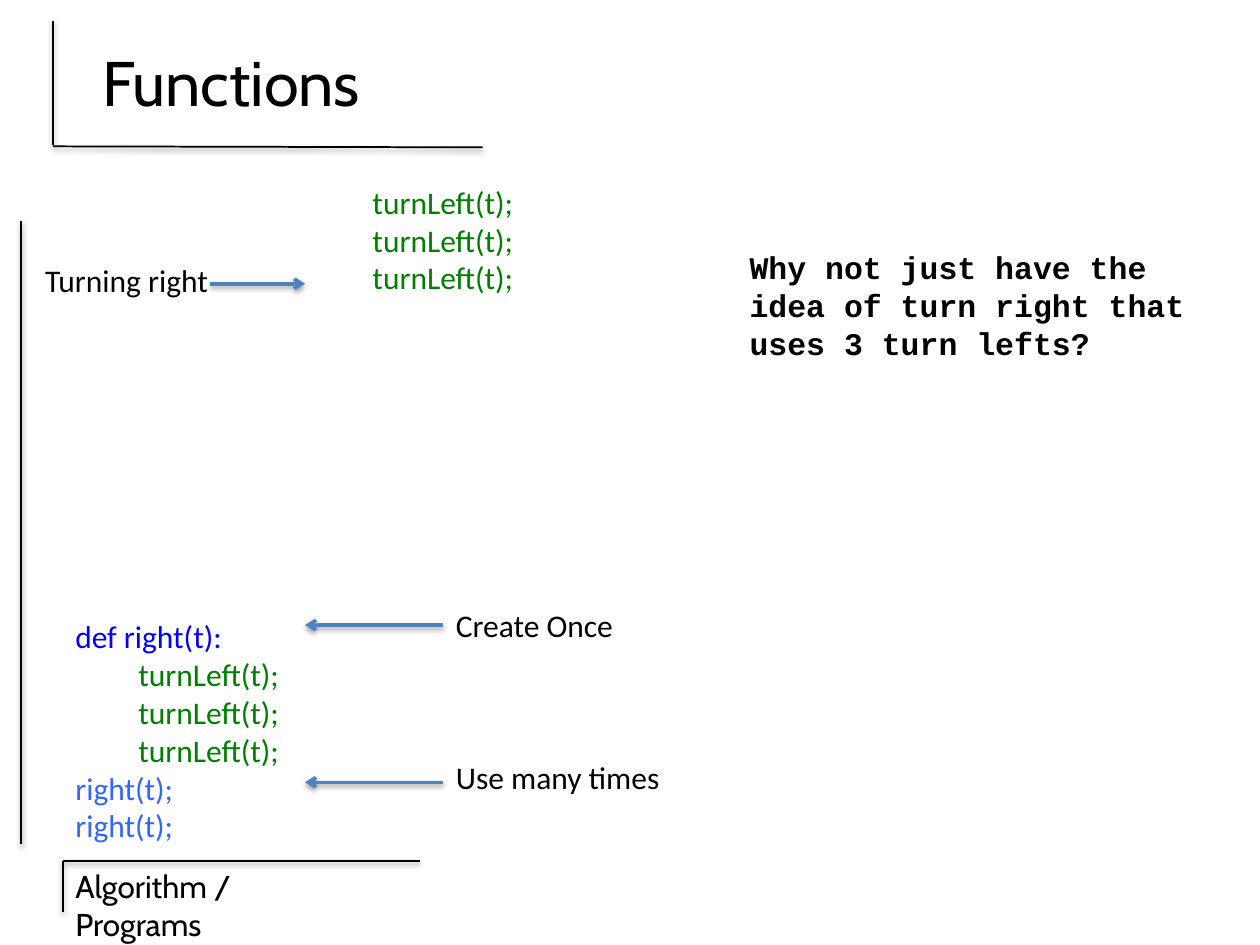
"""Build the Functions slide about defining a right turn once and reusing it."""
from typing import NamedTuple

from lxml.etree import SubElement as Sub
from pptx import Presentation
from pptx.dml.color import RGBColor as Rgb
from pptx.enum.shapes import MSO_CONNECTOR as Link
from pptx.enum.text import MSO_ANCHOR as Anchor, PP_ALIGN as Align
from pptx.oxml.ns import qn
from pptx.slide import Slide
from pptx.util import Cm, Pt

BLACK, GREEN, BLUE, SKY, STEEL = "000000", "008000", "0000FF", "3366FF", "4F81BD"
TIP, NOTE = 6.15, 8.94
TURN = "turnLeft(t);"


class Row(NamedTuple):
    text: str
    color: str = BLACK
    indent: float = 0


class Box(NamedTuple):
    left: float
    top: float
    width: float
    height: float


class Rule(NamedTuple):
    x1: float
    y1: float
    x2: float
    y2: float


FRAME = [
    Rule(8.46, 17.35, 1.27, 17.35),
    Rule(0.43, 4.45, 0.43, 17.02),
    Rule(1.27, 17.35, 1.27, 18.39),
    Rule(9.73, 2.97, 1.07, 2.95),
    Rule(1.07, 0.43, 1.07, 2.92),
]
ARROWS = [
    Rule(4.24, 5.72, TIP, 5.72),
    Rule(NOTE, 12.6, TIP, 12.6),
    Rule(NOTE, 15.77, TIP, 15.77),
]
CODE = [
    Row("def right(t):", BLUE),
    *[Row(TURN, GREEN, 1.27)] * 3,
    *[Row("right(t);", SKY)] * 2,
]
IDEA = ["Why not just have the", "idea of turn right that", "uses 3 turn lefts?"]


def paint(color: str) -> Rgb:
    return Rgb.from_string(color)


def draw_line(slide: Slide, rule: Rule, color: str = BLACK,
              width: float = 1, arrow: bool = False) -> None:
    line = slide.shapes.add_connector(Link.STRAIGHT, *map(Cm, rule))
    line.line.color.rgb = paint(color)
    line.line.width = Pt(width)
    props = line._element.spPr
    if arrow:
        Sub(props.find(qn("a:ln")), qn("a:tailEnd"), type="arrow")
    shade = Sub(Sub(props, qn("a:effectLst")), qn("a:outerShdw"),
                blurRad=str(Pt(3.1)), dist=str(Pt(1.6)),
                dir="5400000", rotWithShape="0")
    tint = Sub(shade, qn("a:srgbClr"), val=BLACK)
    Sub(tint, qn("a:alpha"), val="38000")


def write(slide: Slide, box: Box, rows: list[Row], *, font: str = "Calibri",
          size: float = 18, bold: bool = False, wrap: bool = True,
          align: Align = Align.LEFT, anchor: Anchor = Anchor.TOP) -> None:
    frame = slide.shapes.add_textbox(*map(Cm, box)).text_frame
    frame.word_wrap = wrap
    frame.vertical_anchor = anchor
    for i, row in enumerate(rows):
        para = frame.add_paragraph() if i else frame.paragraphs[0]
        para.alignment = align
        if row.indent:
            para._p.get_or_add_pPr().set("marL", str(Cm(row.indent)))
        run = para.add_run()
        run.text = row.text
        run.font.name = font
        run.font.size = Pt(size)
        run.font.bold = bold
        run.font.color.rgb = paint(row.color)


def main() -> None:
    deck = Presentation()
    deck.slide_width, deck.slide_height = Cm(25.4), Cm(19.05)
    slide = deck.slides.add_slide(deck.slide_layouts[6])
    for rule in FRAME:
        draw_line(slide, rule)
    for rule in ARROWS:
        draw_line(slide, rule, STEEL, 2, arrow=True)
    write(slide, Box(1.27, 17.35, 6.15, 1.02), [Row("Algorithm / Programs")],
          font="Cabin")
    write(slide, Box(1.27, 0.43, 6.78, 2.41), [Row("Functions")], font="Cabin",
          size=36, align=Align.CENTER, anchor=Anchor.MIDDLE)
    write(slide, Box(7.26, 3.56, 3.38, 2.57), [Row(TURN, GREEN)] * 3, wrap=False)
    write(slide, Box(0.66, 5.13, 3.84, 1.02), [Row("Turning right")], wrap=False)
    write(slide, Box(14.86, 4.88, 10.54, 2.57), [Row(text) for text in IDEA],
          font="Courier New", bold=True)
    write(slide, Box(1.27, 12.32, 4.67, 4.88), CODE, wrap=False)
    for text, top in (("Create Once", 12.09), ("Use many times", 15.16)):
        write(slide, Box(NOTE, top, 5.18, 1.02), [Row(text)])
    deck.save("out.pptx")


if __name__ == "__main__":
    main()
